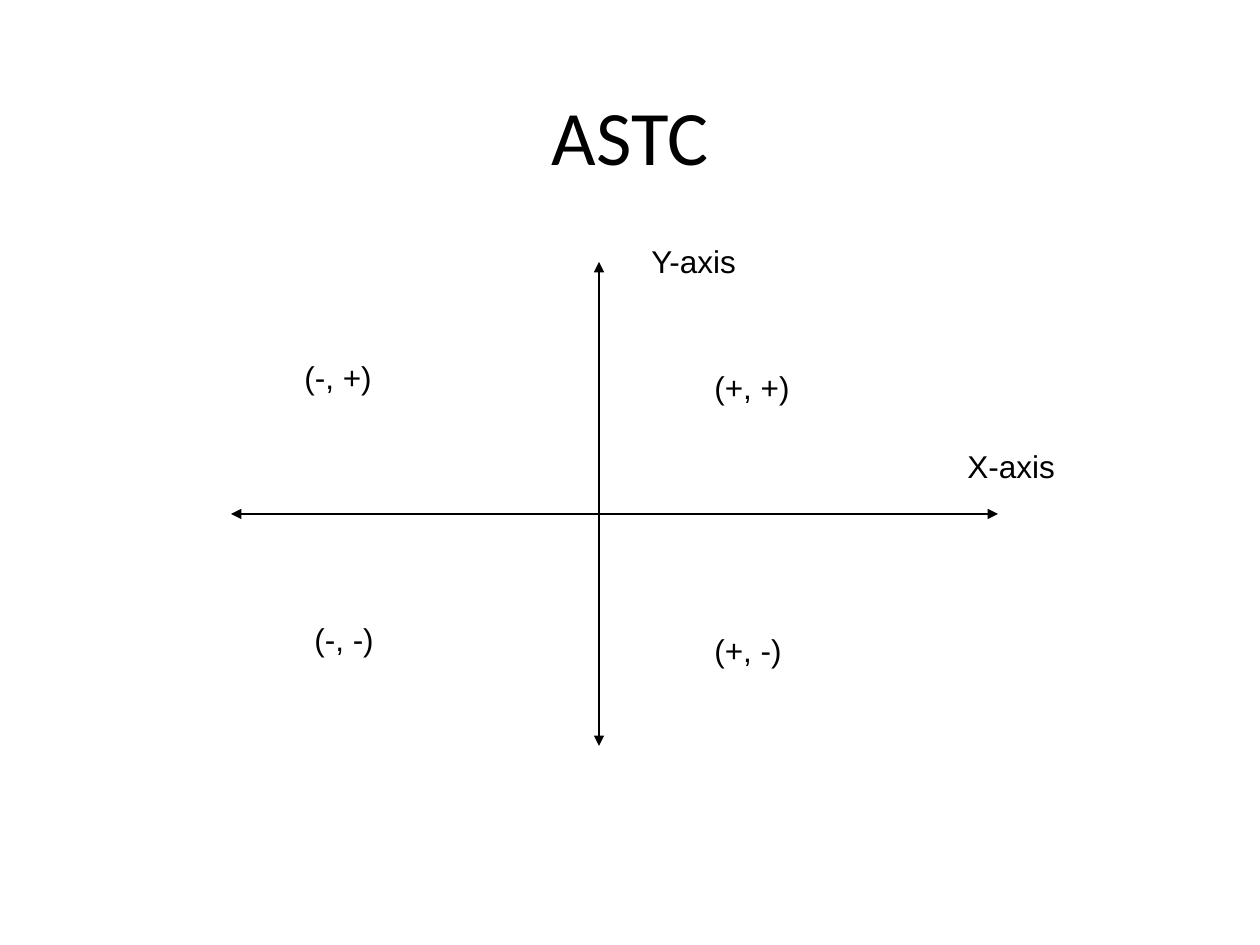
"""Build a slide showing the signs of the coordinates in the four quadrants."""
from dataclasses import dataclass

from lxml import etree
from pptx import Presentation
from pptx.dml.color import RGBColor
from pptx.enum.shapes import MSO_CONNECTOR
from pptx.enum.text import MSO_ANCHOR, MSO_AUTO_SIZE, PP_ALIGN
from pptx.oxml.ns import qn
from pptx.slide import Slide
from pptx.text.text import _Paragraph
from pptx.util import Emu, Pt

STRAIGHT = MSO_CONNECTOR.STRAIGHT
MIDDLE = MSO_ANCHOR.MIDDLE
FIT_SHAPE = MSO_AUTO_SIZE.SHAPE_TO_FIT_TEXT
CENTER = PP_ALIGN.CENTER

BLACK = RGBColor(0x00, 0x00, 0x00)
WHITE = RGBColor(0xFF, 0xFF, 0xFF)
PIXELS_PER_INCH = 126
LABEL_HEIGHT = 50
TITLE_ONLY_LAYOUT = 5


@dataclass(frozen=True)
class Axis:
    start_x: int
    start_y: int
    end_x: int
    end_y: int


@dataclass(frozen=True)
class Label:
    text: str
    left: int
    top: int
    width: int


AXES = [
    Axis(599, 262, 599, 746),
    Axis(231, 514, 998, 514),
]
LABELS = [
    Label("Y-axis", 639, 236, 114),
    Label("X-axis", 955, 441, 114),
    Label("(+, +)", 702, 362, 102),
    Label("(+, -)", 702, 625, 94),
    Label("(-, +)", 292, 352, 94),
    Label("(-, -)", 302, 614, 87),
]


def px(pixels: int) -> Emu:
    return Emu(round(pixels * 914400 / PIXELS_PER_INCH))


def style_text(paragraph: _Paragraph, font_name: str, size: int) -> None:
    paragraph.font.name = font_name
    paragraph.font.size = Pt(size)
    paragraph.font.color.rgb = BLACK


def set_title(slide: Slide, text: str) -> None:
    title = slide.shapes.title
    title.left, title.top = px(63), px(73)
    title.width, title.height = px(1134), px(123)
    title.text_frame.text = text
    title.text_frame.vertical_anchor = MIDDLE
    paragraph = title.text_frame.paragraphs[0]
    paragraph.alignment = CENTER
    style_text(paragraph, "Calibri", 44)


def draw_axis(slide: Slide, axis: Axis) -> None:
    connector = slide.shapes.add_connector(
        STRAIGHT, px(axis.start_x), px(axis.start_y), px(axis.end_x), px(axis.end_y)
    )
    connector.line.color.rgb = BLACK
    connector.line.width = Pt(0.75)
    properties = connector.element.spPr
    line = properties.find(qn("a:ln"))
    for end in ("a:headEnd", "a:tailEnd"):
        etree.SubElement(line, qn(end), type="triangle")
    etree.SubElement(properties, qn("a:effectLst"))


def draw_label(slide: Slide, label: Label) -> None:
    text_box = slide.shapes.add_textbox(
        px(label.left), px(label.top), px(label.width), px(LABEL_HEIGHT)
    )
    text_frame = text_box.text_frame
    text_frame.word_wrap = False
    text_frame.auto_size = FIT_SHAPE
    text_frame.text = label.text
    style_text(text_frame.paragraphs[0], "Arial", 18)


def main() -> None:
    presentation = Presentation()
    presentation.slide_width, presentation.slide_height = px(1260), px(945)
    layout = presentation.slide_layouts[TITLE_ONLY_LAYOUT]
    slide = presentation.slides.add_slide(layout)
    slide.background.fill.solid()
    slide.background.fill.fore_color.rgb = WHITE
    set_title(slide, "ASTC")
    for axis in AXES:
        draw_axis(slide, axis)
    for label in LABELS:
        draw_label(slide, label)
    presentation.save("out.pptx")


if __name__ == "__main__":
    main()
